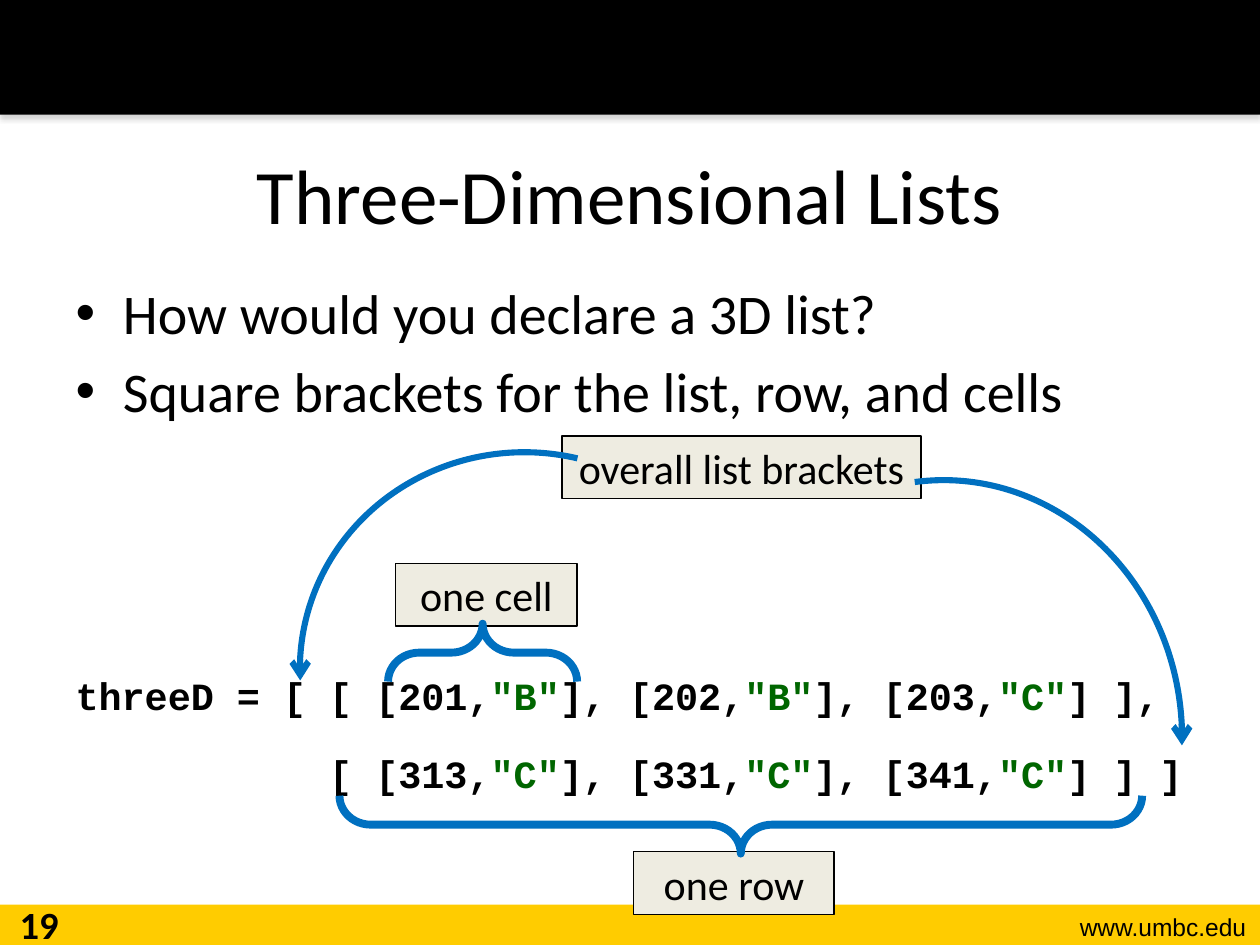
"""Builds the slide on declaring three-dimensional lists."""
from dataclasses import dataclass

from lxml import etree
from pptx import Presentation, util as u
from pptx.dml.color import RGBColor
from pptx.enum import shapes, text
from pptx.oxml import parse_xml
from pptx.oxml.ns import nsdecls, qn

COLS, ROWS = 100, 75
SHAPE = shapes.MSO_SHAPE
ALIGN = text.PP_ALIGN


@dataclass(frozen=True)
class Theme:
    """Colours, fonts and type sizes of the slide."""
    black: str = "000000"
    gold: str = "FFCC00"
    label: str = "EEECE1"
    mark: str = "0070C0"
    string: str = "006600"
    body_font: str = "Calibri"
    code_font: str = "Courier New"
    foot_font: str = "Arial"
    title_size: int = 44
    bullet_size: int = 32
    label_size: int = 24
    code_size: int = 22
    foot_size: int = 14
    brace_width: float = 4.5
    arrow_width: float = 3.5
    border_width: float = 0.75


T = Theme()


def grid(*cells):
    """Turn grid cells of a tenth of an inch into lengths."""
    return [u.Inches(c / 10) for c in cells]


def apply(target, **values):
    """Set each given attribute on the target."""
    for name, value in values.items():
        setattr(target, name, value)


def add_run(p, words, size, font=T.body_font, color=T.black, bold=False):
    """Append a formatted run to a paragraph."""
    r = p.add_run()
    r.text = words
    apply(r.font, size=u.Pt(size), name=font, bold=bold)
    r.font.color.rgb = RGBColor.from_string(color)


def add_shape(s, kind, cells, fill=None, line=None, width=0):
    """Add a shadowless preset shape in grid cells."""
    sp = s.shapes.add_shape(kind, *grid(*cells))
    sp.shadow.inherit = False
    if fill:
        sp.fill.solid()
        sp.fill.fore_color.rgb = RGBColor.from_string(fill)
    else:
        sp.fill.background()
    if line:
        sp.line.color.rgb = RGBColor.from_string(line)
        sp.line.width = u.Pt(width)
    else:
        sp.line.fill.background()
    return sp


def add_header(s):
    """Add the black header band with its soft shadow."""
    sp = add_shape(s, SHAPE.RECTANGLE, (0, 0, COLS, 9.1), T.black)
    effects = sp._element.spPr.find(qn("a:effectLst"))
    effects.append(parse_xml(
        f'<a:outerShdw {nsdecls("a")} blurRad="40000" dist="23000" dir="5400000" rotWithShape="0">'
        '<a:srgbClr val="808080"><a:alpha val="35000"/></a:srgbClr></a:outerShdw>'))


def add_text(s, cells, words, align, size, **style):
    """Add a one-line text box."""
    tf = s.shapes.add_textbox(*grid(*cells)).text_frame
    tf.word_wrap = True
    tf.paragraphs[0].alignment = align
    add_run(tf.paragraphs[0], words, size, **style)


def add_label(s, cells, words):
    """Add a bordered label box."""
    sp = add_shape(s, SHAPE.RECTANGLE, cells, T.label, T.black, T.border_width)
    tf = sp.text_frame
    apply(tf, word_wrap=True, vertical_anchor=text.MSO_ANCHOR.MIDDLE)
    tf.paragraphs[0].alignment = ALIGN.CENTER
    add_run(tf.paragraphs[0], words, T.label_size)


def add_brace(s, cells, rotation):
    """Add a turned curly brace."""
    sp = add_shape(s, SHAPE.LEFT_BRACE, cells, None, T.mark, T.brace_width)
    sp.rotation = rotation
    sp.adjustments[0], sp.adjustments[1] = 0.54, 0.5


def add_arc_arrow(s, cells, rotation, start, flip=False):
    """Add an arc that ends in an arrowhead."""
    sp = add_shape(s, SHAPE.ARC, cells, None, T.mark, T.arrow_width)
    sp.rotation = rotation
    sp.adjustments[0], sp.adjustments[1] = start, 166.03
    if flip:
        sp._element.spPr.find(qn("a:xfrm")).set("flipH", "1")
    ln = sp._element.spPr.find(qn("a:ln"))
    etree.SubElement(ln, qn("a:tailEnd"), type="arrow")


def place(sp, cells):
    """Move a placeholder to grid cells and return its text frame."""
    apply(sp, **dict(zip(("left", "top", "width", "height"), grid(*cells))))
    apply(sp.text_frame, word_wrap=True, auto_size=text.MSO_AUTO_SIZE.NONE)
    return sp.text_frame


def add_code(p, line):
    """Write a code line with its quoted strings coloured."""
    pPr = p._p.get_or_add_pPr()
    pPr.set("marL", "0")
    pPr.set("indent", "0")
    etree.SubElement(pPr, qn("a:buNone"))
    for i, part in enumerate(line.split('"')):
        quoted = i % 2 == 1
        add_run(p, f'"{part}"' if quoted else part, T.code_size, T.code_font,
                T.string if quoted else T.black, True)


def fill_body(sp):
    """Write the bullets and the code below them."""
    tf = place(sp, (5, 21.6, 92.1, 49.4))
    lines = [
        ("How would you declare a 3D list?", 0, False),
        ("Square brackets for the list, row, and cells", 6, False),
        ('threeD = [ [ [201,"B"], [202,"B"], [203,"C"] ],', 142, True),
        ('           [ [313,"C"], [331,"C"], [341,"C"] ] ]', 18, True),
    ]
    for i, (words, gap, is_code) in enumerate(lines):
        p = tf.add_paragraph() if i else tf.paragraphs[0]
        p.space_before = u.Pt(gap)
        if is_code:
            add_code(p, words)
        else:
            add_run(p, words, T.bullet_size)


def main():
    """Build and save the slide."""
    prs = Presentation()
    prs.slide_width, prs.slide_height = grid(COLS, ROWS)
    s = prs.slides.add_slide(prs.slide_layouts[1])

    add_shape(s, SHAPE.RECTANGLE, (0, 71.8, COLS, 3.2), T.gold)
    add_header(s)
    add_text(s, (80, 71.9, 19.9, 3.4), "www.umbc.edu", ALIGN.RIGHT, T.foot_size, font=T.foot_font)
    add_text(s, (0, 71, 6.2, 4), "19", ALIGN.CENTER, T.code_size, bold=True)

    title = place(s.shapes.title, (5, 9.1, 90, 12.5))
    title.vertical_anchor = text.MSO_ANCHOR.MIDDLE
    title.paragraphs[0].alignment = ALIGN.CENTER
    add_run(title.paragraphs[0], "Three-Dimensional Lists", T.title_size)
    fill_body(s.placeholders[1])

    add_label(s, (31.4, 44.7, 14.4, 5), "one cell")
    add_brace(s, (36, 44.3, 4.6, 15), 90)
    add_label(s, (50.3, 67.6, 15.9, 5), "one row")
    add_brace(s, (56.5, 33.6, 4.6, 63.7), 270)
    add_label(s, (44.6, 34.6, 28.5, 5), "overall list brackets")
    add_arc_arrow(s, (24.4, 35.3, 34.6, 35.8), 274.1, 102.17, flip=True)
    add_arc_arrow(s, (54.9, 39.6, 40.4, 37.4), 85.9, 106.19)
    prs.save("out.pptx")


if __name__ == "__main__":
    main()
